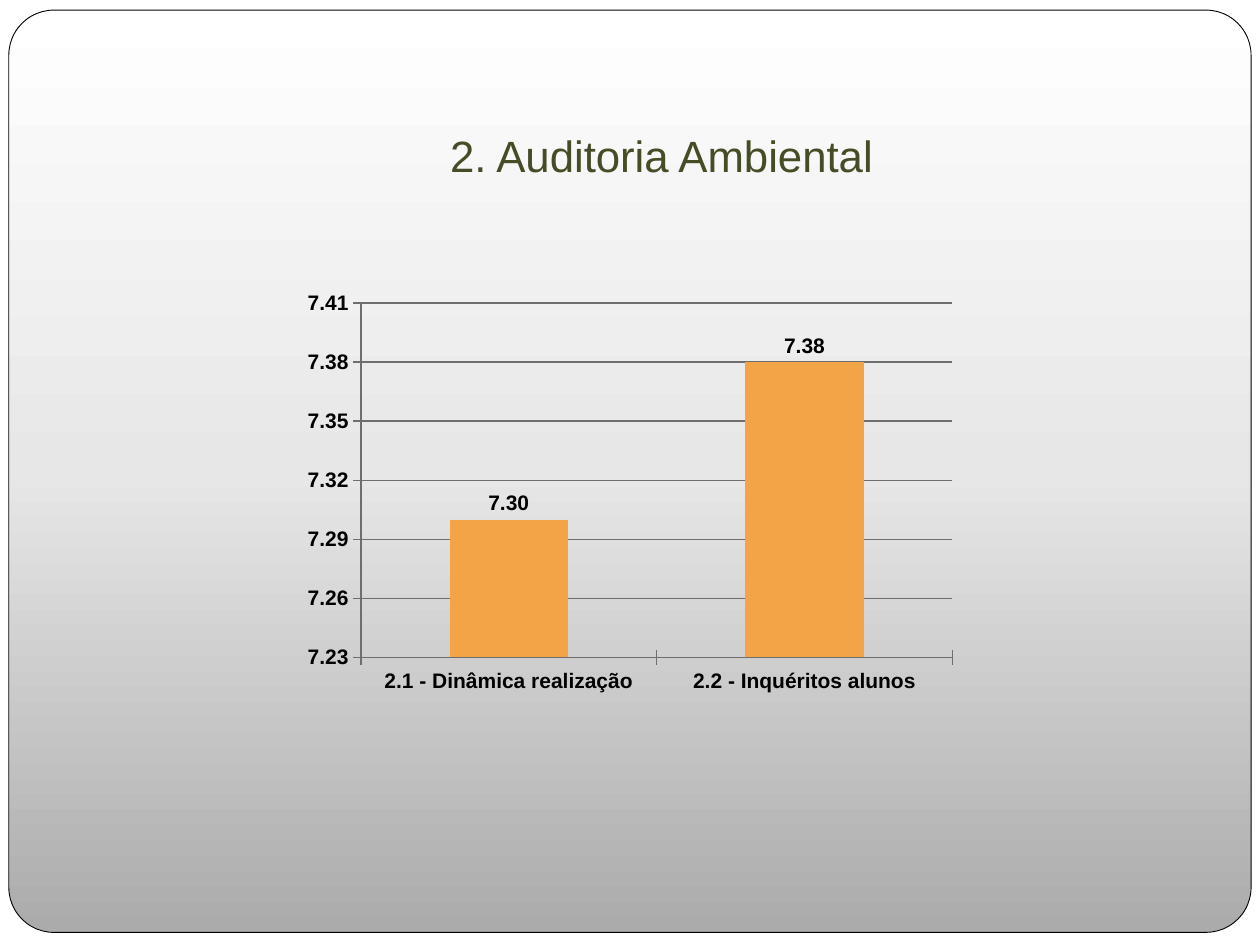
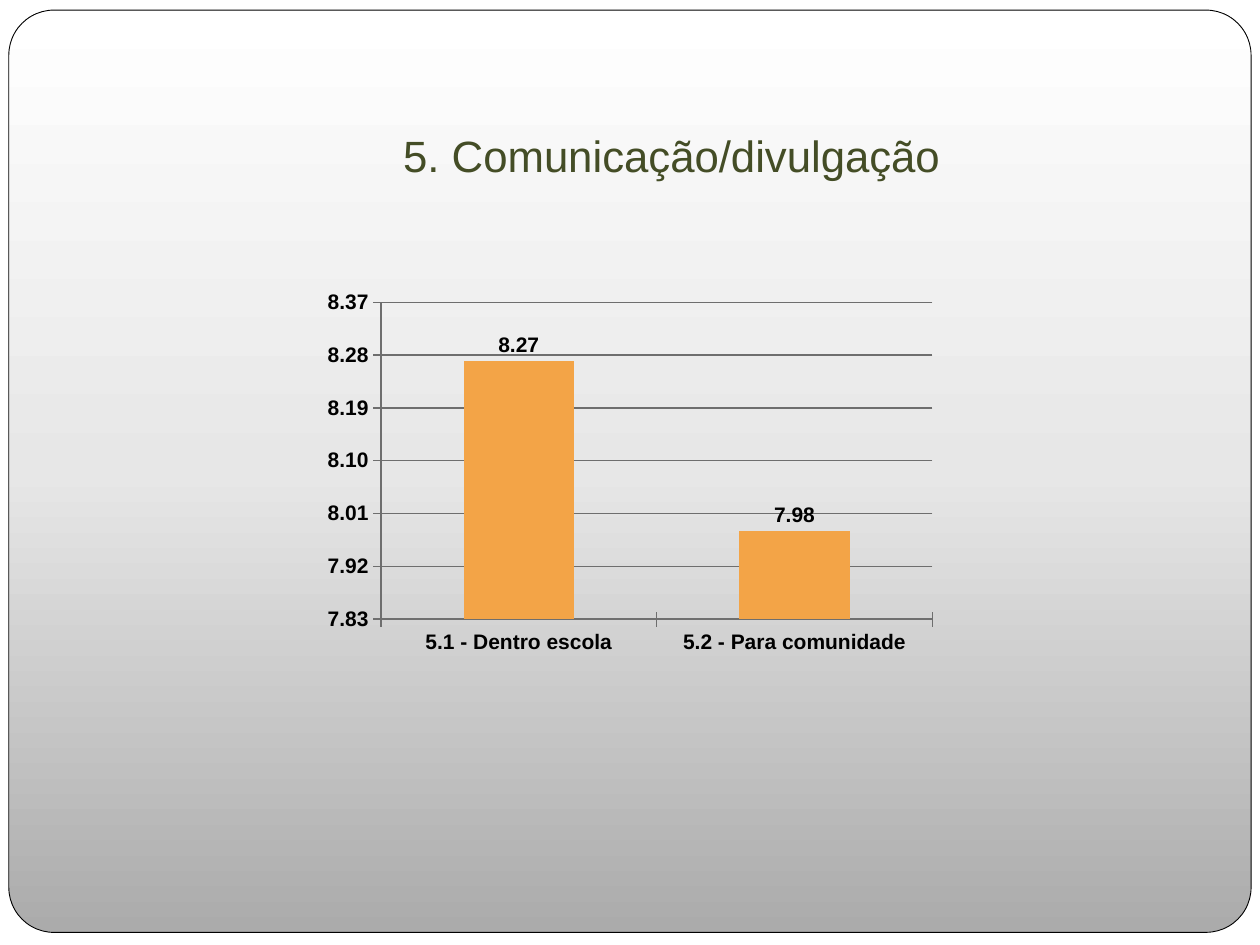
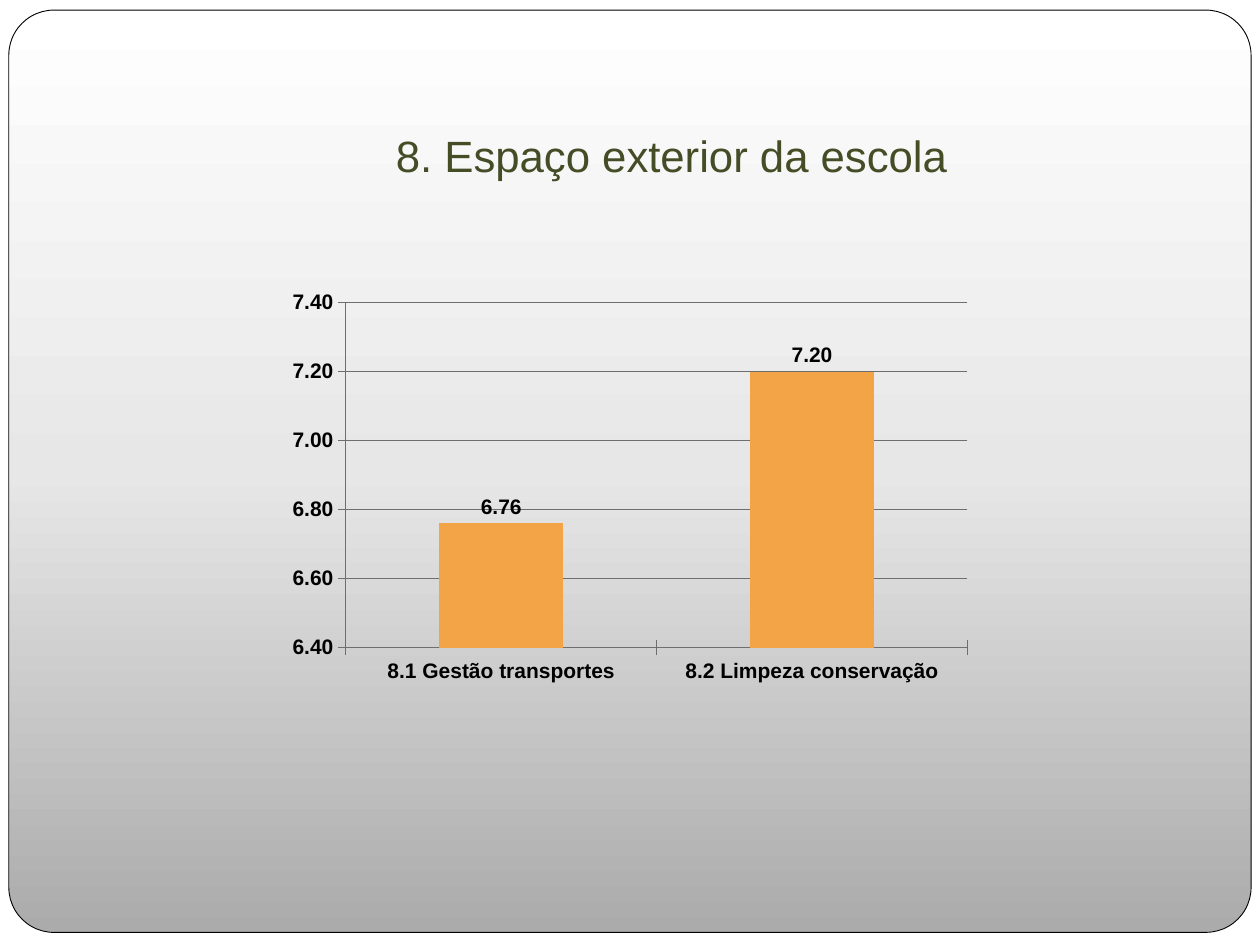
from copy import deepcopy

from pptx import Presentation
from pptx.chart.data import CategoryChartData
from pptx.dml.color import RGBColor
from pptx.enum.chart import XL_CHART_TYPE as ChartType
from pptx.enum.chart import XL_LABEL_POSITION as LabelPosition
from pptx.enum.chart import XL_TICK_MARK as TickMark
from pptx.enum.shapes import MSO_SHAPE as Preset
from pptx.enum.text import MSO_ANCHOR, MSO_AUTO_SIZE, PP_ALIGN
from pptx.util import Inches, Pt

# Content: title, its left edge, chart width and height, axis (min, max, step), scores
TOPICS = [
    dict(title="2. Auditoria Ambiental", title_left=0.75, chart_size=(5.33, 3.31),
         scale=(7.23, 7.41, 0.03),
         scores={"2.1 - Dinâmica realização": 7.3, "2.2 - Inquéritos alunos": 7.38}),
    dict(title="5. Comunicação/divulgação", title_left=0.83, chart_size=(5, 3),
         scale=(7.83, 8.37, 0.09),
         scores={"5.1 - Dentro escola": 8.27, "5.2 - Para comunidade": 7.98}),
    dict(title="8. Espaço exterior da escola", title_left=0.83, chart_size=(5.58, 3.23),
         scale=(6.4, 7.4, 0.2),
         scores={"8.1 Gestão transportes": 6.76, "8.2 Limpeza conservação": 7.2}),
]

# Shared look
WHITE = RGBColor(0xFF, 0xFF, 0xFF)
BLACK = RGBColor(0x00, 0x00, 0x00)
SILVER = RGBColor(0xE7, 0xE7, 0xE7)
GREY = RGBColor(0xAB, 0xAB, 0xAB)
AXIS_GREY = RGBColor(0x6E, 0x6E, 0x6E)
OLIVE = RGBColor(0x44, 0x4D, 0x26)
ORANGE = RGBColor(0xF3, 0xA4, 0x47)
SLIDE_W, SLIDE_H = 10, 7.5
CHART_TOP = 2.25
NUMBER_FORMAT = "0.00"
TITLE_FRAME = dict(margin_left=Inches(0.1), margin_right=Inches(0.1),
                   margin_top=Inches(0.05), margin_bottom=Inches(0.1),
                   vertical_anchor=MSO_ANCHOR.BOTTOM, word_wrap=True,
                   auto_size=MSO_AUTO_SIZE.NONE)
TITLE_FONT = dict(name="Arial", size=Pt(25), bold=False)
CHART_FONT = dict(name="Arial", size=Pt(12), bold=True)


def apply(target, values):
    for name, value in values.items():
        setattr(target, name, value)


def fade(fill):
    """Grey at the bottom, silver in the middle, white at the top."""
    fill.gradient()
    fill.gradient_angle = 90
    first = fill.gradient_stops[0]
    stop_list = fill.gradient_stops[1]._gs.getparent()
    stop_list.insert(1, deepcopy(first._gs))
    for stop, (position, color) in zip(fill.gradient_stops,
                                       [(0, GREY), (0.5, SILVER), (1, WHITE)]):
        stop.position = position
        stop.color.rgb = color


def style_layout(layout, slide):
    """Draw the sheet and the rounded panel once, and hand them to the layout."""
    fade(layout.background.fill)
    sheet = slide.shapes.add_shape(Preset.RECTANGLE, 0, 0, Inches(SLIDE_W), Inches(SLIDE_H))
    sheet.fill.solid()
    sheet.fill.fore_color.rgb = WHITE
    sheet.line.fill.background()

    panel = slide.shapes.add_shape(Preset.ROUNDED_RECTANGLE, Inches(0.07), Inches(0.08),
                                   Inches(9.86), Inches(7.32))
    panel.adjustments[0] = 0.049
    fade(panel.fill)
    panel.line.color.rgb = BLACK
    panel.line.width = Pt(0.5)

    for order, shape in enumerate((sheet, panel)):
        shape.shadow.inherit = False
        shape.element.nvSpPr.cNvPr.set("id", str(100 + order))
        layout.shapes.element.insert(2 + order, shape.element)


def write_title(title, text, left):
    apply(title, dict(left=Inches(left), top=Inches(0.29),
                      width=Inches(9), height=Inches(1.25)))
    title.text = text
    apply(title.text_frame, TITLE_FRAME)
    heading = title.text_frame.paragraphs[0]
    heading.alignment = PP_ALIGN.CENTER
    font = heading.runs[0].font
    apply(font, TITLE_FONT)
    font.color.rgb = OLIVE


def draw_scores(slide, scores, size, scale):
    data = CategoryChartData(number_format=NUMBER_FORMAT)
    data.categories = list(scores)
    data.add_series("Series 1", list(scores.values()))
    width, height = size
    chart = slide.shapes.add_chart(
        ChartType.COLUMN_CLUSTERED, Inches((SLIDE_W - width) / 2 + 0.0),
        Inches(CHART_TOP), Inches(width), Inches(height), data).chart
    chart.has_title = chart.has_legend = False
    apply(chart.font, CHART_FONT)
    chart.font.color.rgb = BLACK

    # Axes
    scores_axis = chart.value_axis
    apply(scores_axis, dict(zip(("minimum_scale", "maximum_scale", "major_unit"), scale)))
    apply(scores_axis.tick_labels, dict(number_format=NUMBER_FORMAT,
                                        number_format_is_linked=False))
    for axis in (chart.category_axis, scores_axis):
        axis.major_tick_mark = TickMark.CROSS
    for line in (chart.category_axis.format.line, scores_axis.format.line,
                 scores_axis.major_gridlines.format.line):
        line.color.rgb = AXIS_GREY
        line.width = Pt(0.75)

    # Columns and their labels
    plot = chart.plots[0]
    apply(plot, dict(gap_width=150, vary_by_categories=False))
    columns = plot.series[0]
    columns.format.fill.solid()
    columns.format.fill.fore_color.rgb = ORANGE
    apply(columns.data_labels, dict(show_value=True, number_format=NUMBER_FORMAT,
                                    number_format_is_linked=False,
                                    position=LabelPosition.OUTSIDE_END))


def main():
    deck = Presentation()
    deck.slide_width, deck.slide_height = Inches(SLIDE_W), Inches(SLIDE_H)
    layout = deck.slide_layouts.get_by_name("Title Only")
    for number, topic in enumerate(TOPICS):
        slide = deck.slides.add_slide(layout)
        if number == 0:
            style_layout(layout, slide)
        write_title(slide.shapes.title, topic["title"], topic["title_left"])
        draw_scores(slide, topic["scores"], topic["chart_size"], topic["scale"])
    deck.save("out.pptx")


if __name__ == "__main__":
    main()
